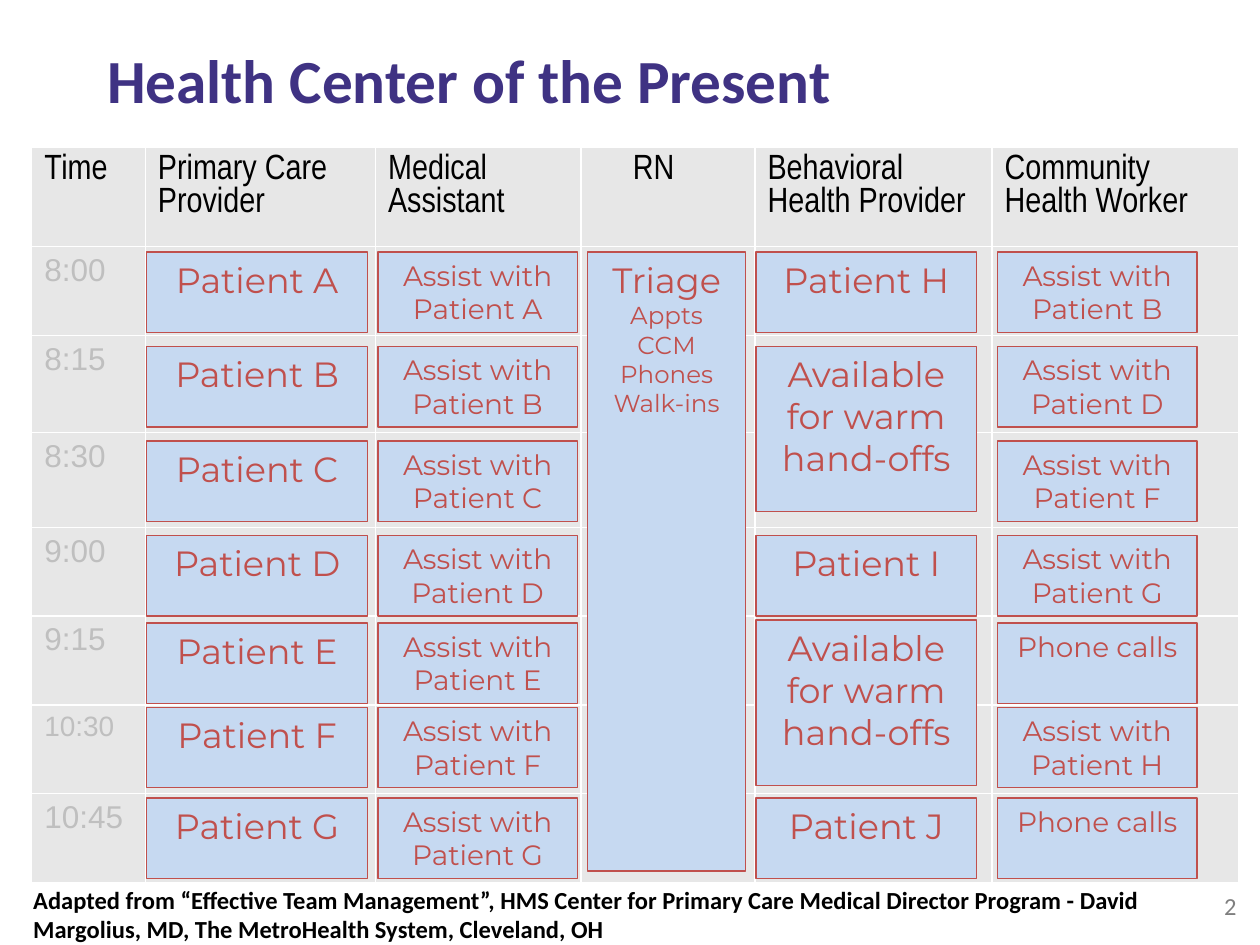
from typing import Any, NamedTuple

from lxml import etree
from pptx import Presentation
from pptx import util as u
from pptx.dml.color import RGBColor
from pptx.enum import shapes, text
from pptx.oxml.ns import qn

COLORS = {
    "title": "3F3283", "ink": "000000", "time": "BFBFBF", "page": "7F7F7F",
    "cell": "E7E7E7", "grid": "FFFFFF", "card": "C6D9F1", "accent": "C0504D",
}


class Style(NamedTuple):
    font: str
    size: float
    color: str
    bold: bool = False


class Box(NamedTuple):
    left: float
    top: float
    width: float
    height: float


class Lane(NamedTuple):
    left: float
    width: float
    size: float


class Card(NamedTuple):
    lane: Lane
    top: float
    label: str
    height: float = 1.62
    details: tuple[str, ...] = ()


TITLE = Style("Calibri", 35, "title", True)
HEADER = Style("Arial Narrow", 20, "ink")
TIME = Style("Arial", 18, "time")
SOURCE = Style("Calibri", 14, "ink", True)
PAGE = Style("Calibri", 14, "page")

# Schedule grid, lengths in centimetres
COLUMN_WIDTHS = (2.29, 4.64, 4.14, 3.51, 4.78, 4.98)
ROW_HEIGHTS = (2.0, 1.79, 1.96, 1.91, 1.79, 1.79, 1.79, 1.79)
ROLES = ("Time", "Primary Care Provider", "Medical Assistant", "RN",
         "Behavioral Health Provider", "Community Health Worker")
TIMES = ("8:00", "8:15", "8:30", "9:00", "9:15", "10:30", "10:45")
RN_INDENT = 1.05

# Appointment cards
SLOT_TOPS = (5.08, 6.99, 8.89, 10.8, 12.56, 14.26, 16.09)
PROVIDER = Lane(2.96, 4.45, 20)
ASSISTANT = Lane(7.62, 4.02, 16)
NURSE = Lane(11.85, 3.18, 20)
BEHAVIORAL = Lane(15.24, 4.45, 20)
COMMUNITY = Lane(20.11, 4.02, 16)
COMMUNITY_PATIENTS = ("B", "D", "F", "G", "", "H", "")
HAND_OFFS = "Available for warm hand-offs"


def rgb(name: str) -> RGBColor:
    return RGBColor.from_string(COLORS[name])


def apply(target: Any, values: dict[str, Any]) -> None:
    for name, value in values.items():
        setattr(target, name, value)


def write(paragraph: Any, words: str, style: Style, **layout: Any) -> None:
    apply(paragraph, layout)
    run = paragraph.add_run()
    run.text = words
    apply(run.font, {"name": style.font, "size": u.Pt(style.size), "bold": style.bold})
    run.font.color.rgb = rgb(style.color)


def add_text(slide: Any, box: Box, words: str, style: Style,
             frame_values: dict[str, Any], **layout: Any) -> None:
    frame = slide.shapes.add_textbox(*map(u.Cm, box)).text_frame
    apply(frame, {"word_wrap": True, **frame_values})
    write(frame.paragraphs[0], words, style, **layout)


def add_borders(cell: Any) -> None:
    properties = cell._tc.get_or_add_tcPr()
    for index, side in enumerate(("lnL", "lnR", "lnT", "lnB")):
        line = etree.Element(qn(f"a:{side}"), w=str(u.Pt(1)))
        fill = etree.SubElement(line, qn("a:solidFill"))
        etree.SubElement(fill, qn("a:srgbClr"), val=COLORS["grid"])
        properties.insert(index, line)


def add_schedule(slide: Any) -> None:
    table = slide.shapes.add_table(
        len(ROW_HEIGHTS), len(COLUMN_WIDTHS), u.Cm(0.64), u.Cm(2.97),
        u.Cm(sum(COLUMN_WIDTHS)), u.Cm(sum(ROW_HEIGHTS))).table
    apply(table, {"first_row": False, "horz_banding": False})
    for column, width in zip(table.columns, COLUMN_WIDTHS):
        column.width = u.Cm(width)
    for row, height in zip(table.rows, ROW_HEIGHTS):
        row.height = u.Cm(height)
    for cell in table.iter_cells():
        cell.fill.solid()
        cell.fill.fore_color.rgb = rgb("cell")
        add_borders(cell)
    for column, role in enumerate(ROLES):
        cell = table.cell(0, column)
        write(cell.text_frame.paragraphs[0], role, HEADER, line_spacing=1.0)
        if role == "RN":
            cell.margin_left = u.Cm(RN_INDENT)
    for row, time in enumerate(TIMES, start=1):
        style = TIME._replace(size=16) if time == "10:30" else TIME
        write(table.cell(row, 0).text_frame.paragraphs[0], time, style)


def add_card(slide: Any, card: Card) -> None:
    lane = card.lane
    shape = slide.shapes.add_shape(
        shapes.MSO_SHAPE.RECTANGLE,
        *map(u.Cm, (lane.left, card.top, lane.width, card.height)))
    shape.shadow.inherit = False
    shape.fill.solid()
    shape.fill.fore_color.rgb = rgb("card")
    shape.line.color.rgb = rgb("accent")
    shape.line.width = u.Pt(0.75)
    frame = shape.text_frame
    apply(frame, {"word_wrap": True, "vertical_anchor": text.MSO_ANCHOR.TOP,
                  "auto_size": text.MSO_AUTO_SIZE.SHAPE_TO_FIT_TEXT})
    style = Style("Montserrat", lane.size, "accent")
    write(frame.paragraphs[0], card.label, style, alignment=text.PP_ALIGN.CENTER)
    for detail in card.details:
        write(frame.add_paragraph(), detail, style._replace(size=14),
              alignment=text.PP_ALIGN.CENTER)


def schedule_cards() -> list[Card]:
    cards = []
    for top, patient, helped in zip(SLOT_TOPS, "ABCDEFG", COMMUNITY_PATIENTS):
        task = f"Assist with Patient {helped}" if helped else "Phone calls"
        cards += [Card(PROVIDER, top, f"Patient {patient}"),
                  Card(ASSISTANT, top, f"Assist with Patient {patient}"),
                  Card(COMMUNITY, top, task)]
    cards += [Card(BEHAVIORAL, SLOT_TOPS[slot], f"Patient {patient}")
              for slot, patient in ((0, "H"), (3, "I"), (6, "J"))]
    cards += [Card(BEHAVIORAL, top, HAND_OFFS, 3.33) for top in (SLOT_TOPS[1], 12.5)]
    cards.append(Card(NURSE, SLOT_TOPS[0], "Triage", 12.48,
                      ("Appts", "CCM", "Phones", "Walk-ins")))
    return cards


def main() -> None:
    deck = Presentation()
    apply(deck, {"slide_width": u.Cm(25.4), "slide_height": u.Cm(19.05)})
    slide = deck.slides.add_slide(deck.slide_layouts[6])

    # Page number and schedule
    add_text(slide, Box(19.26, 17.83, 5.92, 1.02), "2", PAGE,
             {"vertical_anchor": text.MSO_ANCHOR.TOP},
             alignment=text.PP_ALIGN.RIGHT)
    add_schedule(slide)

    # Title, cards and source line
    add_text(slide, Box(1.91, 0, 21.59, 3.18), "Health Center of the Present", TITLE,
             {"vertical_anchor": text.MSO_ANCHOR.MIDDLE})
    for card in schedule_cards():
        add_card(slide, card)
    add_text(slide, Box(0.42, 17.71, 23.7, 1.45),
             "Adapted from “Effective Team Management”, HMS Center for Primary Care "
             "Medical Director Program - David Margolius, MD, The MetroHealth System, "
             "Cleveland, OH", SOURCE,
             {"auto_size": text.MSO_AUTO_SIZE.SHAPE_TO_FIT_TEXT})
    deck.save("out.pptx")


if __name__ == "__main__":
    main()
